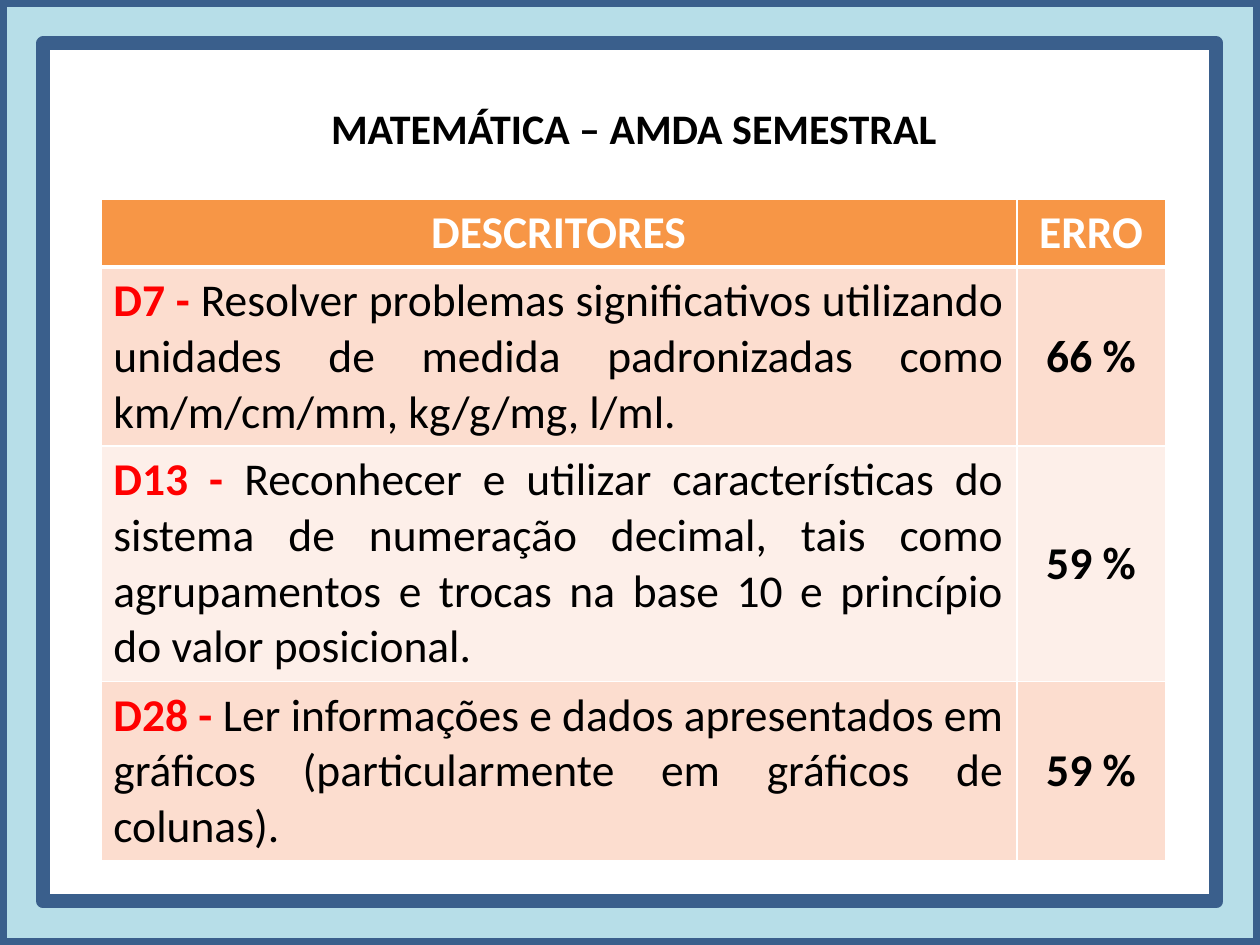
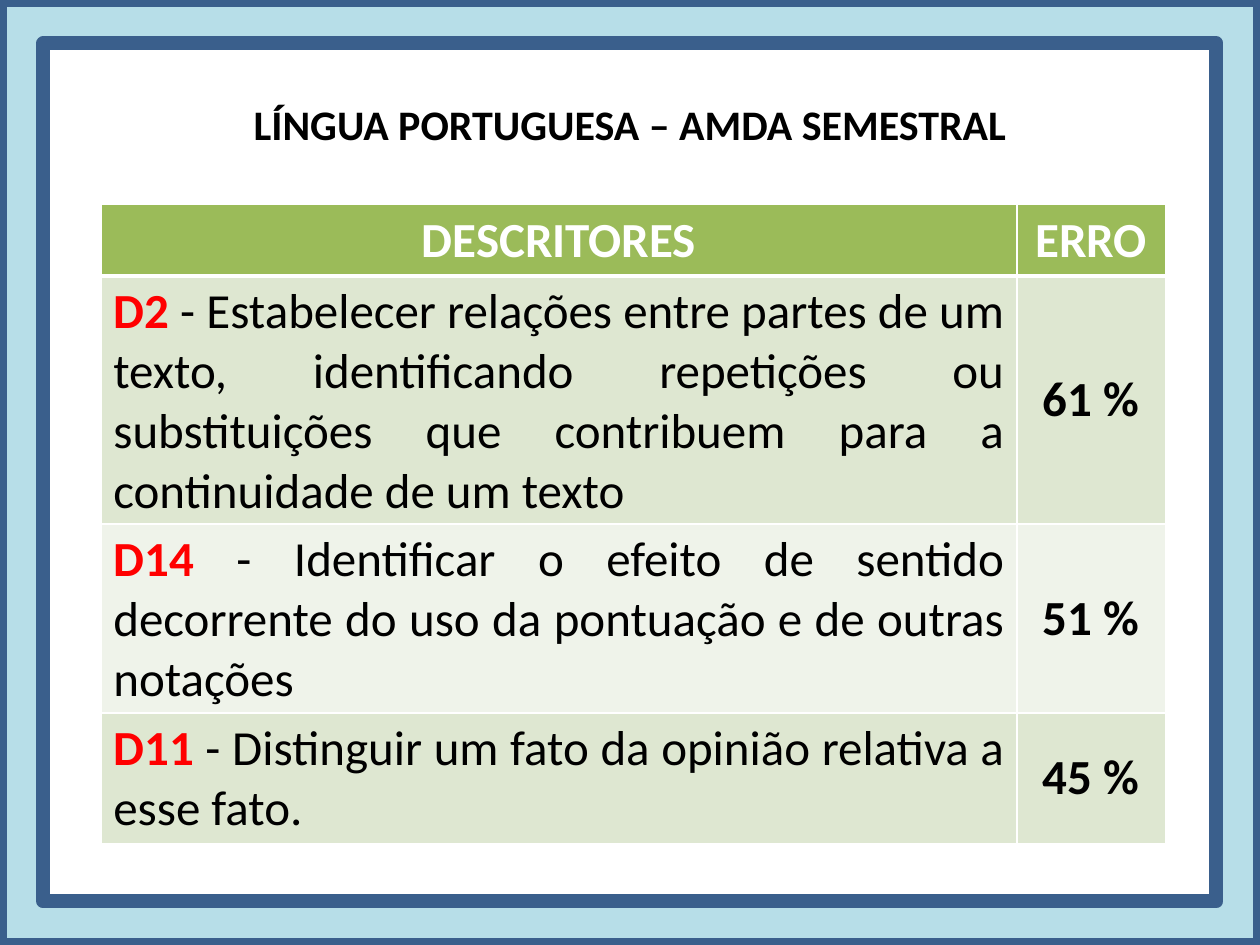
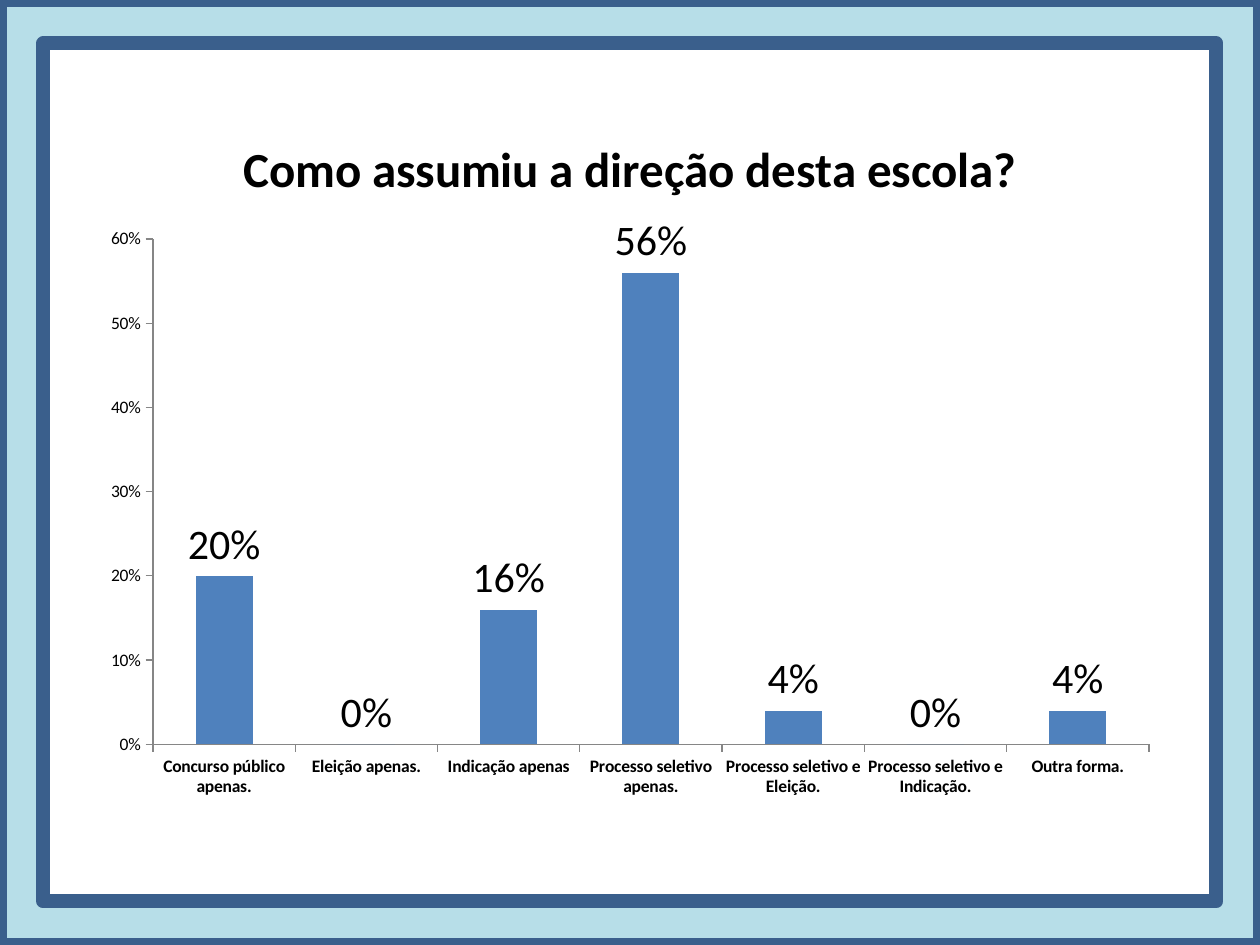
import lxml.etree
import pptx
import pptx.chart.data
import pptx.dml.color
import pptx.enum.chart
import pptx.enum.shapes
import pptx.enum.text
import pptx.oxml.ns
import pptx.util

Inches = pptx.util.Inches
Pt = pptx.util.Pt
PP_ALIGN = pptx.enum.text.PP_ALIGN
MIDDLE = pptx.enum.text.MSO_ANCHOR.MIDDLE
TICK = pptx.enum.chart.XL_TICK_MARK

FONT = "Calibri"
COLORS = {
    "black": "000000", "white": "FFFFFF", "code": "FF0000",
    "frame": "B7DEE8", "frame_line": "3A5F8C",
    "bar": "4F81BD", "axis": "868686",
}
TABLE_SLIDES = [
    {
        "title": "MATEMÁTICA – AMDA SEMESTRAL", "title_at": (0.78, 0.76),
        "top": 1.58, "size": 26, "heights": (0.54, 1.42, 1.87, 1.42),
        "header": "F79646", "bands": ("FCDDCF", "FDEFE9"),
        "rows": [
            ("D7 - ", "Resolver problemas significativos utilizando unidades de medida "
             "padronizadas como km/m/cm/mm, kg/g/mg, l/ml.", "66 %"),
            ("D13 - ", "Reconhecer e utilizar características do sistema de numeração "
             "decimal, tais como agrupamentos e trocas na base 10 e princípio do valor "
             "posicional.", "59 %"),
            ("D28 - ", "Ler informações e dados apresentados em gráficos "
             "(particularmente em gráficos de colunas).", "59 %"),
        ],
    },
    {
        "title": "LÍNGUA PORTUGUESA – AMDA SEMESTRAL", "title_at": (0.75, 0.73),
        "top": 1.62, "size": 28, "heights": (0.57, 1.96, 1.5, 1.03),
        "header": "9BBB59", "bands": ("DEE7D1", "EFF3EA"),
        "rows": [
            ("D2", " - Estabelecer relações entre partes de um texto, identificando "
             "repetições ou substituições que contribuem para a continuidade de um texto",
             "61 %"),
            ("D14", " - Identificar o efeito de sentido decorrente do uso da pontuação e "
             "de outras notações", "51 %"),
            ("D11", " - Distinguir um fato da opinião relativa a esse fato.", "45 %"),
        ],
    },
]
COLUMN_WIDTHS = (7.27, 1.18)
ANSWERS = {
    "Concurso público apenas.": 0.2,
    "Eleição apenas.": 0,
    "Indicação apenas": 0.16,
    "Processo seletivo apenas.": 0.56,
    "Processo seletivo e Eleição.": 0.04,
    "Processo seletivo e Indicação.": 0,
    "Outra forma.": 0.04,
}


def set_font(font, size, color="black", bold=False):
    for name, value in {"name": FONT, "size": Pt(size), "bold": bold}.items():
        setattr(font, name, value)
    font.color.rgb = pptx.dml.color.RGBColor.from_string(COLORS[color])


def add_framed_slide(prs, layout):
    s = prs.slides.add_slide(prs.slide_layouts.get_by_name(layout))
    sp = s.shapes.add_shape(pptx.enum.shapes.MSO_SHAPE.FRAME, 0, 0,
                            prs.slide_width, prs.slide_height)
    sp.adjustments[0] = 0.046
    sp.shadow.inherit = False
    sp.fill.solid()
    sp.fill.fore_color.rgb = pptx.dml.color.RGBColor.from_string(COLORS["frame"])
    sp.line.color.rgb = pptx.dml.color.RGBColor.from_string(COLORS["frame_line"])
    sp.line.width = Pt(8)
    return s


prs = pptx.Presentation()
prs.slide_width, prs.slide_height = Inches(10), Inches(7.5)

# Descriptor tables
for info in TABLE_SLIDES:
    s = add_framed_slide(prs, "Title Only")
    title = s.shapes.title
    left, top = info["title_at"]
    place = {"left": left, "top": top, "width": 8.5, "height": 0.5}
    for name, value in place.items():
        setattr(title, name, Inches(value))
    title.text_frame.text = info["title"]
    title.text_frame.auto_size = pptx.enum.text.MSO_AUTO_SIZE.SHAPE_TO_FIT_TEXT
    p = title.text_frame.paragraphs[0]
    p.alignment = PP_ALIGN.CENTER
    set_font(p.runs[0].font, 24, bold=True)

    table = s.shapes.add_table(
        len(info["heights"]), len(COLUMN_WIDTHS), Inches(0.8), Inches(info["top"]),
        Inches(sum(COLUMN_WIDTHS)), Inches(sum(info["heights"]))).table
    for column, width in zip(table.columns, COLUMN_WIDTHS):
        column.width = Inches(width)
    for row, height in zip(table.rows, info["heights"]):
        row.height = Inches(height)

    # Each cell is a list of (text, colour, bold) runs
    grid = [[[("DESCRITORES", "white", True)], [("ERRO", "white", True)]]]
    for code, text, error in info["rows"]:
        grid.append([[(code, "code", True), (text, "black", False)],
                     [(error, "black", True)]])

    for i, cells in enumerate(grid):
        fill = info["bands"][(i - 1) % 2] if i else info["header"]
        for j, runs in enumerate(cells):
            cell = table.cell(i, j)
            descriptor = i > 0 and j == 0
            p = cell.text_frame.paragraphs[0]
            p.alignment = PP_ALIGN.JUSTIFY if descriptor else PP_ALIGN.CENTER
            if not descriptor:
                cell.vertical_anchor = MIDDLE
            for text, color, bold in runs:
                r = p.add_run()
                r.text = text
                set_font(r.font, info["size"], color, bold)
            tcPr = cell._tc.get_or_add_tcPr()
            for side in "LRTB":
                thick = (i, side) in ((0, "B"), (1, "T"))
                ln = lxml.etree.SubElement(tcPr, pptx.oxml.ns.qn("a:ln" + side),
                                           w=str(Pt(3 if thick else 1)))
                solid = lxml.etree.SubElement(ln, pptx.oxml.ns.qn("a:solidFill"))
                lxml.etree.SubElement(solid, pptx.oxml.ns.qn("a:srgbClr"),
                                      val=COLORS["white"])
            cell.fill.solid()
            cell.fill.fore_color.rgb = pptx.dml.color.RGBColor.from_string(fill)

# Chart of how the head took up the post
s = add_framed_slide(prs, "Blank")
data = pptx.chart.data.CategoryChartData(number_format="0%")
data.categories = list(ANSWERS)
data.add_series("Series 1", list(ANSWERS.values()))
chart = s.shapes.add_chart(
    pptx.enum.chart.XL_CHART_TYPE.COLUMN_CLUSTERED,
    Inches(0.71), Inches(0.84), Inches(8.58), Inches(5.59), data).chart
set_font(chart.font, 10)
chart.has_legend = False
chart.has_title = True
chart.chart_title.include_in_layout = False
chart.chart_title.text_frame.text = "Como assumiu a direção desta escola?"
set_font(chart.chart_title.text_frame.paragraphs[0].runs[0].font, 28, bold=True)

for axis, bold in ((chart.category_axis, True), (chart.value_axis, False)):
    axis.has_major_gridlines = False
    axis.major_tick_mark = TICK.OUTSIDE
    axis.minor_tick_mark = TICK.NONE
    axis.format.line.color.rgb = pptx.dml.color.RGBColor.from_string(COLORS["axis"])
    set_font(axis.tick_labels.font, 10, bold=bold)
scale = {"minimum_scale": 0, "maximum_scale": 0.6, "major_unit": 0.1}
for name, value in scale.items():
    setattr(chart.value_axis, name, value)
chart.value_axis.tick_labels.number_format = "0%"
chart.value_axis.tick_labels.number_format_is_linked = False

plot = chart.plots[0]
plot.gap_width = 150
plot.vary_by_categories = False
series = plot.series[0]
series.format.fill.solid()
series.format.fill.fore_color.rgb = pptx.dml.color.RGBColor.from_string(COLORS["bar"])
labels = series.data_labels
label_format = {
    "show_value": True, "number_format": "0%", "number_format_is_linked": False,
    "position": pptx.enum.chart.XL_LABEL_POSITION.OUTSIDE_END,
}
for name, value in label_format.items():
    setattr(labels, name, value)
set_font(labels.font, 24)

prs.save("out.pptx")
